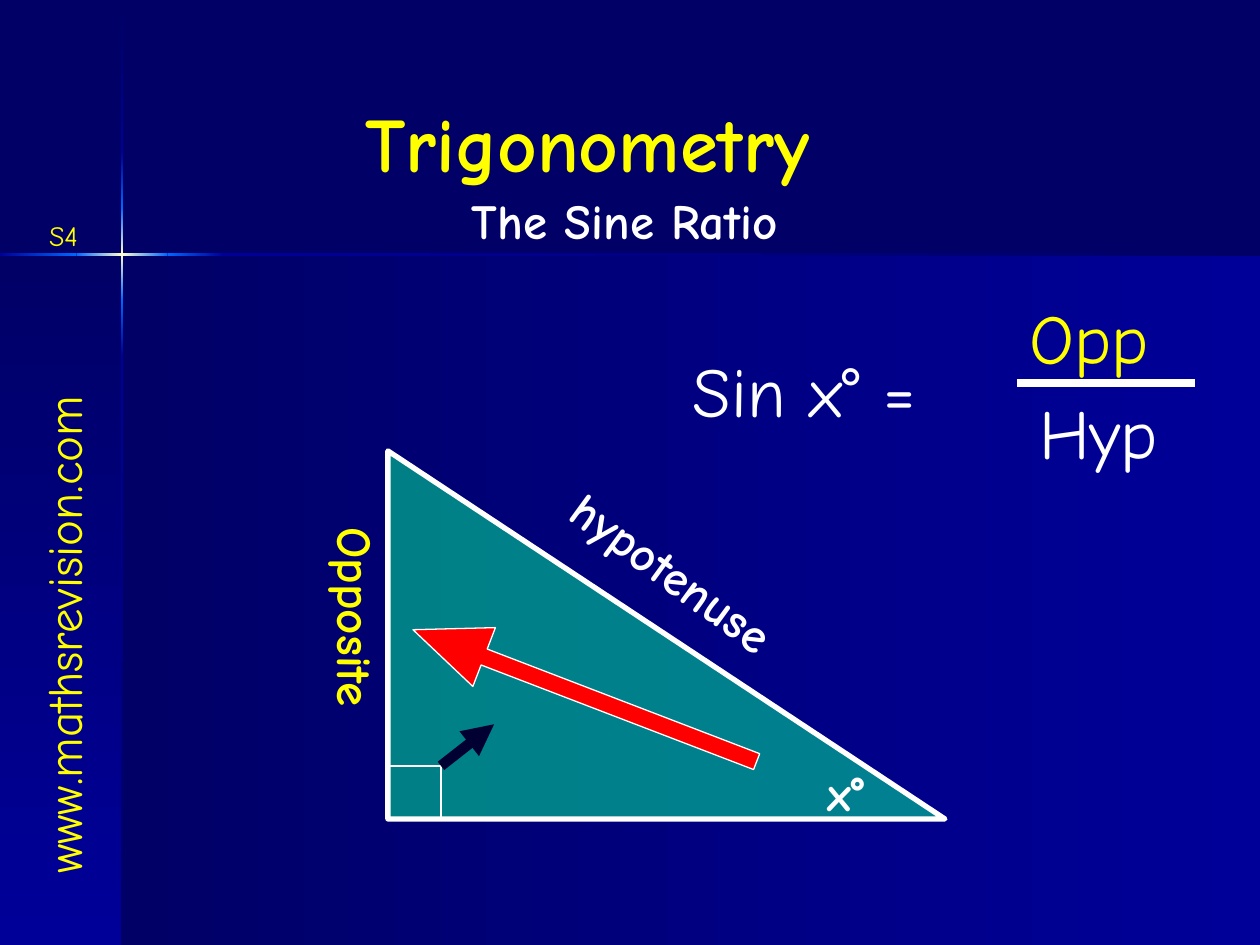
from dataclasses import dataclass
from itertools import pairwise

from lxml.etree import SubElement
from pptx import Presentation
from pptx.dml.color import RGBColor
from pptx.enum.shapes import MSO_CONNECTOR, MSO_SHAPE
from pptx.enum.text import MSO_ANCHOR, MSO_AUTO_SIZE, PP_ALIGN
from pptx.oxml.ns import qn
from pptx.util import Cm, Pt

FONT = "Comic Neue"
NAVY = RGBColor(0x00, 0x00, 0x66)
BLUE = RGBColor(0x00, 0x00, 0x99)
AZURE = RGBColor(0x00, 0x66, 0xFF)
CREAM = RGBColor(0xFF, 0xFF, 0xCC)
YELLOW = RGBColor(0xFF, 0xFF, 0x00)
WHITE = RGBColor(0xFF, 0xFF, 0xFF)
MINT = RGBColor(0x00, 0xFF, 0x99)
RED = RGBColor(0xFF, 0x00, 0x00)
INK = RGBColor(0x00, 0x00, 0x33)

WIDE, HIGH = 25.4, 19.05
CROSS_X, CROSS_Y = 2.46, 5.13
BEAM = 0.05
LEFT, TOP, BASE, RISE = 7.82, 9.09, 11.23, 7.42
CORNER = 1.07


@dataclass
class Box:
    x: float
    y: float
    w: float
    h: float

    def cm(self) -> tuple:
        return Cm(self.x), Cm(self.y), Cm(self.w), Cm(self.h)


@dataclass
class Label:
    text: str
    box: Box
    size: int = 28
    color: RGBColor = WHITE
    bold: bool = False
    center: bool = False
    wrap: bool = True
    middle: bool = False
    turn: float = 0


LABELS = [
    Label("www.mathsrevision.com", Box(-4.29, 11.56, 11.15, 1.45),
          color=YELLOW, wrap=False, turn=270),
    Label("Trigonometry", Box(7.11, 1.8, 10.44, 2.13), 44, YELLOW, bold=True),
    Label("x°", Box(16.21, 15.24, 1.7, 1.45), bold=True, center=True,
          wrap=False, middle=True),
    Label("Sin x° =", Box(13.72, 6.88, 6.15, 1.96), 40),
    Label("Opp", Box(20.5, 5.82, 3.18, 1.96), 40, YELLOW),
    Label("Hyp", Box(20.7, 7.72, 3.61, 1.96), 40),
    Label("hypotenuse", Box(9.96, 10.8, 7.19, 1.45), bold=True, center=True,
          turn=36.1),
    Label("S4", Box(0.66, 4.29, 1.24, 0.94), 16, YELLOW, center=True,
          wrap=False),
]
SIDE = Label("Opposite", Box(6.35, 10.39, 1.7, 4.39), color=YELLOW, bold=True,
             center=True, wrap=False, middle=True)


def write(frame, text: str, *, size=28, color=WHITE, bold=False,
          center=False, wrap=True, middle=False, fit=True) -> None:
    frame.word_wrap = wrap
    frame.auto_size = (MSO_AUTO_SIZE.SHAPE_TO_FIT_TEXT if fit
                       else MSO_AUTO_SIZE.NONE)
    frame.vertical_anchor = MSO_ANCHOR.MIDDLE if middle else MSO_ANCHOR.TOP
    para = frame.paragraphs[0]
    para.alignment = PP_ALIGN.CENTER if center else PP_ALIGN.LEFT
    run = para.add_run()
    run.text = text
    font = run.font
    font.name, font.size, font.bold = FONT, Pt(size), bold
    font.color.rgb = color


def label(slide, item: Label):
    shape = slide.shapes.add_textbox(*item.box.cm())
    shape.rotation = item.turn
    write(shape.text_frame, item.text, size=item.size, color=item.color,
          bold=item.bold, center=item.center, wrap=item.wrap,
          middle=item.middle)
    return shape


def draw(slide, kind, box: Box, fill=None, width: float = 0):
    """Add a preset shape with a white outline of the given points."""
    shape = slide.shapes.add_shape(kind, *box.cm())
    shape.shadow.inherit = False
    if fill is None:
        shape.fill.background()
    else:
        shape.fill.solid()
        shape.fill.fore_color.rgb = fill
    if width:
        shape.line.color.rgb = WHITE
        shape.line.width = Pt(width)
    else:
        shape.line.fill.background()
    return shape


def blend(slide, box: Box, colors: list[RGBColor], down: bool) -> None:
    """Add a rectangle shaded evenly through the colours."""
    shape = draw(slide, MSO_SHAPE.RECTANGLE, box)
    shape.fill.gradient()
    shape.fill.gradient_angle = 270 if down else 0
    stops = shape._element.spPr.find(qn("a:gradFill")).find(qn("a:gsLst"))
    for old in list(stops):
        stops.remove(old)
    for i, color in enumerate(colors):
        pos = 100000 * i // (len(colors) - 1)
        stop = SubElement(stops, qn("a:gs"), pos=str(pos))
        SubElement(stop, qn("a:srgbClr"), val=str(color))


def beam(slide, cuts: list[float], shades: list, down: bool) -> None:
    """Lay shaded strips end to end between the cuts."""
    for (start, end), colors in zip(pairwise(cuts), shades):
        if down:
            box = Box(CROSS_X - BEAM / 2, start, BEAM, end - start)
        else:
            box = Box(start, CROSS_Y - BEAM / 2, end - start, BEAM)
        blend(slide, box, colors, down)


def rule(slide, start: tuple, end: tuple, color: RGBColor, width: float,
         head: bool = False) -> None:
    line = slide.shapes.add_connector(
        MSO_CONNECTOR.STRAIGHT, *(Cm(v) for v in start + end))
    line.line.color.rgb = color
    line.line.width = Pt(width)
    if head:
        SubElement(line.line._get_or_add_ln(), qn("a:tailEnd"),
                   type="triangle")
    SubElement(line._element.spPr, qn("a:effectLst"))


def backdrop(slide) -> None:
    slide.background.fill.solid()
    slide.background.fill.fore_color.rgb = NAVY
    low = HIGH - CROSS_Y
    blend(slide, Box(CROSS_X, CROSS_Y, WIDE - CROSS_X, low),
          [NAVY, BLUE], False)
    blend(slide, Box(0, CROSS_Y, CROSS_X, low), [NAVY, BLUE], True)
    shades = [[NAVY, BLUE], [BLUE, AZURE], [AZURE, CREAM, AZURE],
              [AZURE, BLUE], [BLUE, NAVY]]
    beam(slide, [0.03, 3.07, 4.19, 6.05, 7.16, HIGH], shades, True)
    beam(slide, [0, 1.54, 3.38, 4.5, WIDE], shades[1:], False)


def figure(slide) -> None:
    tri = draw(slide, MSO_SHAPE.RIGHT_TRIANGLE,
               Box(LEFT, TOP, BASE, RISE), MINT, 3)
    tint = tri._element.spPr.find(qn("a:solidFill"))[0]
    SubElement(tint, qn("a:alpha"), val="50000")
    edge = TOP + RISE - CORNER
    draw(slide, MSO_SHAPE.RECTANGLE, Box(LEFT, edge, CORNER, CORNER),
         width=1.5)
    arrow = draw(slide, MSO_SHAPE.LEFT_ARROW, Box(8.08, 13.39, 7.42, 1.27),
                 RED, 0.75)
    arrow.adjustments[0], arrow.adjustments[1] = 0.27, 1.21
    arrow.rotation = 21
    rule(slide, (LEFT + CORNER, edge), (9.96, 14.6), INK, 6, head=True)


def main() -> None:
    deck = Presentation()
    deck.slide_width, deck.slide_height = Cm(WIDE), Cm(HIGH)
    slide = deck.slides.add_slide(deck.slide_layouts[5])
    backdrop(slide)

    title = slide.shapes.title
    title.left, title.top, title.width, title.height = Box(
        6.3, 3.71, 12.6, 1.6).cm()
    write(title.text_frame, "The Sine Ratio", bold=True, center=True,
          fit=False)
    slide.shapes._spTree.append(title._element)

    figure(slide)
    for item in LABELS:
        label(slide, item)
    side = label(slide, SIDE).text_frame
    side.margin_left = side.margin_right = Cm(0.13)
    side.margin_top = side.margin_bottom = Cm(0.25)
    side._txBody.bodyPr.set("vert", "eaVert")
    rule(slide, (20.5, 7.72), (24.08, 7.72), WHITE, 4.5)
    deck.save("out.pptx")


if __name__ == "__main__":
    main()
